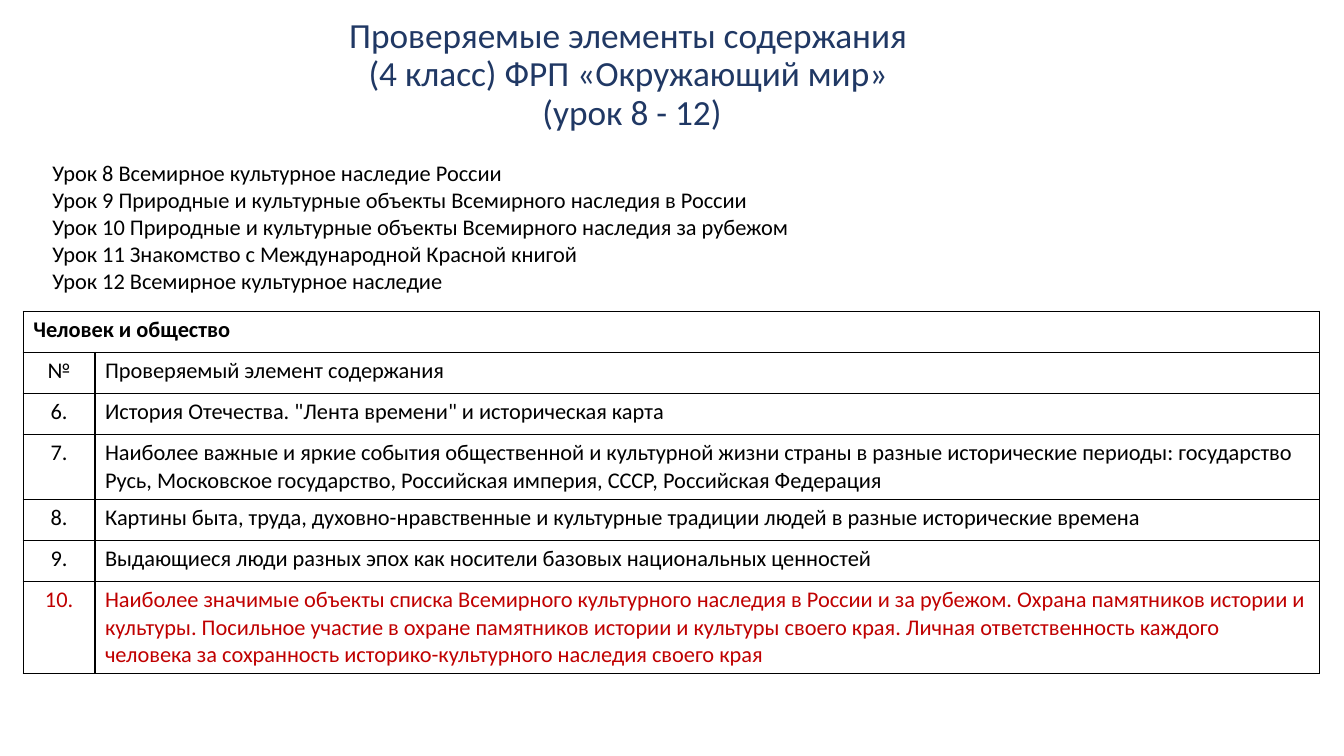
from lxml.etree import SubElement
from pptx import Presentation
from pptx.dml.color import RGBColor
from pptx.enum.text import MSO_ANCHOR, MSO_AUTO_SIZE, PP_ALIGN
from pptx.oxml.ns import qn
from pptx.util import Pt

NAVY, BLACK, RED, WHITE = "203864", "000000", "C00000", "FFFFFF"
TITLE = "Проверяемые элементы содержания \v(4 класс) ФРП «Окружающий мир» \v(урок 8 - 12)"
LESSONS = [
    "Урок 8 Всемирное культурное наследие России",
    "Урок 9 Природные и культурные объекты Всемирного наследия в России",
    "Урок 10 Природные и культурные объекты Всемирного наследия за рубежом",
    "Урок 11 Знакомство с Международной Красной книгой",
    "Урок 12 Всемирное культурное наследие",
]
SECTION = "Человек и общество"
ROW = 29.3
# Number, content element, row height, colour
ELEMENTS = [
    ("№", "Проверяемый элемент содержания", ROW, BLACK),
    ("6.", 'История Отечества. "Лента времени" и историческая карта', ROW, BLACK),
    ("7.", "Наиболее важные и яркие события общественной и культурной жизни страны "
           "в разные исторические периоды: государство Русь, Московское государство, "
           "Российская империя, СССР, Российская Федерация", 46.4, BLACK),
    ("8.", "Картины быта, труда, духовно-нравственные и культурные традиции людей "
           "в разные исторические времена", ROW, BLACK),
    ("9.", "Выдающиеся люди разных эпох как носители базовых национальных ценностей",
     ROW, BLACK),
    ("10.", "Наиболее значимые объекты списка Всемирного культурного наследия в России "
            "и за рубежом. Охрана памятников истории и культуры. Посильное участие "
            "в охране памятников истории и культуры своего края. Личная ответственность "
            "каждого человека за сохранность историко-культурного наследия своего края",
     65.8, RED),
]


def colour(value):
    return RGBColor.from_string(value)


class SlideBuilder:
    font_name = "Calibri"
    text_size = 16
    title_size = 25.2

    def __init__(self, page):
        self.page = page

    def style(self, para, size, ink, align=PP_ALIGN.LEFT, bold=False):
        para.alignment = align
        para.font.name = self.font_name
        para.font.size = Pt(size)
        para.font.bold = bold
        para.font.color.rgb = colour(ink)

    def place(self, box, left, top, width, height):
        box.left, box.top = Pt(left), Pt(top)
        box.width, box.height = Pt(width), Pt(height)
        box.text_frame.auto_size = MSO_AUTO_SIZE.NONE
        box.text_frame.word_wrap = True

    def title(self, text, *area):
        box = self.page.shapes.title
        self.place(box, *area)
        box.text_frame.vertical_anchor = MSO_ANCHOR.MIDDLE
        para = box.text_frame.paragraphs[0]
        para.text = text
        para.line_spacing = 0.9
        self.style(para, self.title_size, NAVY, PP_ALIGN.CENTER)

    def plain_list(self, lines, *area):
        """Fill the body placeholder with lines that have no bullets."""
        box = self.page.placeholders[1]
        self.place(box, *area)
        box.text_frame.text = "\n".join(lines)
        for para in box.text_frame.paragraphs:
            properties = para._p.get_or_add_pPr()
            properties.set("marL", "0")
            properties.set("indent", "0")
            SubElement(properties, qn("a:buNone"))
            para.space_before = Pt(0)
            self.style(para, self.text_size, BLACK)

    def cell(self, cell, text, ink=BLACK, align=PP_ALIGN.LEFT, bold=False):
        para = cell.text_frame.paragraphs[0]
        para.text = text
        self.style(para, self.text_size, ink, align, bold)

    def frame(self, cell):
        """Give a cell thin black borders and a white fill."""
        properties = cell._tc.get_or_add_tcPr()
        for side in ("lnL", "lnR", "lnT", "lnB"):
            line = SubElement(properties, qn(f"a:{side}"), w=str(Pt(1)))
            fill = SubElement(line, qn("a:solidFill"))
            SubElement(fill, qn("a:srgbClr"), val=BLACK)
        cell.fill.solid()
        cell.fill.fore_color.rgb = colour(WHITE)

    def table(self, section, elements, left, top, widths):
        heights = [ROW] + [height for _, _, height, _ in elements]
        table = self.page.shapes.add_table(
            len(heights), len(widths), Pt(left), Pt(top),
            Pt(sum(widths)), Pt(sum(heights))).table
        table.first_row = table.horz_banding = False
        for column, width in zip(table.columns, widths):
            column.width = Pt(width)
        for row, height in zip(table.rows, heights):
            row.height = Pt(height)
        for cell in table.iter_cells():
            self.frame(cell)
        table.cell(0, 0).merge(table.cell(0, 1))
        self.cell(table.cell(0, 0), section, bold=True)
        for index, (number, text, _, ink) in enumerate(elements, 1):
            self.cell(table.cell(index, 0), number, ink, PP_ALIGN.CENTER)
            self.cell(table.cell(index, 1), text, ink)


def main():
    deck = Presentation()
    deck.slide_width, deck.slide_height = Pt(960), Pt(540)
    builder = SlideBuilder(deck.slides.add_slide(deck.slide_layouts[1]))
    builder.title(TITLE, 37.5, 16, 828, 76)
    builder.table(SECTION, ELEMENTS, 16.6, 222.5, (51.2, 874.8))
    builder.plain_list(LESSONS, 30.2, 110.2, 912, 104.4)
    deck.save("out.pptx")


if __name__ == "__main__":
    main()
